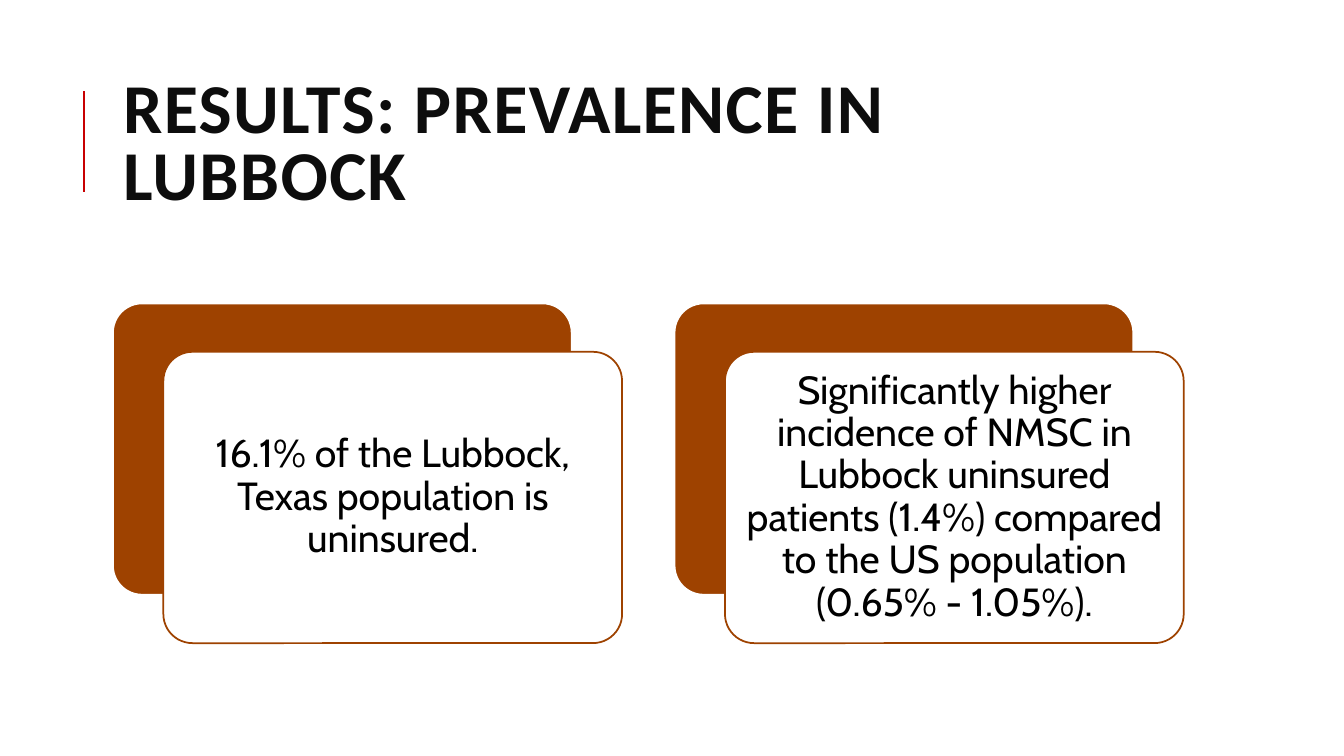
from pptx import Presentation
from pptx.dml.color import RGBColor
from pptx.enum import shapes, text
from pptx.oxml.ns import qn
from pptx.util import Inches, Pt

TITLE = "RESULTS: PREVALENCE IN LUBBOCK"
FINDINGS = [
    "16.1% of the Lubbock, Texas population is uninsured.",
    "Significantly higher incidence of NMSC in Lubbock uninsured patients "
    "(1.4%) compared to the US population (0.65% - 1.05%).",
]
RUST, WHITE, RED, BLACK, INK = "9E4200", "FFFFFF", "C80001", "000000", "0D0D0D"

# Card grid, in inches
LEFT, TOP = 1.12, 3.01
CARD_WIDTH, CARD_HEIGHT = 4.55, 2.89
COLUMN_STEP = 5.57
OFFSET_X, OFFSET_Y = 0.5, 0.48


def color(value):
    return RGBColor.from_string(value)


def write(frame, words, font, size, ink, spacing):
    frame.text = words
    frame.word_wrap = True
    frame.auto_size = text.MSO_AUTO_SIZE.NONE
    frame.vertical_anchor = text.MSO_ANCHOR.MIDDLE
    para = frame.paragraphs[0]
    para.line_spacing = spacing
    span = para.runs[0]
    span.font.name = font
    span.font.size = Pt(size)
    span.font.color.rgb = color(ink)
    return para


def add_card(page, left, top, fill, line):
    card = page.shapes.add_shape(
        shapes.MSO_SHAPE.ROUNDED_RECTANGLE,
        Inches(left), Inches(top), Inches(CARD_WIDTH), Inches(CARD_HEIGHT))
    card.adjustments[0] = 0.1
    card.shadow.inherit = False
    card.fill.solid()
    card.fill.fore_color.rgb = color(fill)
    card.line.color.rgb = color(line)
    card.line.width = Pt(1.25)
    return card


def main():
    deck = Presentation()
    deck.slide_width, deck.slide_height = Inches(13.33), Inches(7.5)
    page = deck.slides.add_slide(deck.slide_layouts[5])

    # Title with its red rule
    title = page.shapes.title
    title.left, title.top = Inches(LEFT), Inches(0.64)
    title.width, title.height = Inches(10.63), Inches(1.64)
    para = write(title.text_frame, TITLE, "Calibri", 50, INK, 0.8)
    para.alignment = text.PP_ALIGN.LEFT
    span = para.runs[0]
    span.font.bold = True
    span.font._element.set("spc", "100")

    rule = page.shapes.add_connector(
        shapes.MSO_CONNECTOR.STRAIGHT,
        Inches(0.83), Inches(1.9), Inches(0.83), Inches(0.9))
    rule.line.color.rgb = color(RED)
    rule.line.width = Pt(1.5)
    properties = rule._element.spPr
    properties.append(properties.makeelement(qn("a:effectLst"), {}))

    # Each finding: a white card over a rust one
    for column, finding in enumerate(FINDINGS):
        left = LEFT + column * COLUMN_STEP
        add_card(page, left, TOP, RUST, WHITE)
        front = add_card(page, left + OFFSET_X, TOP + OFFSET_Y, WHITE, RUST)
        frame = front.text_frame
        frame.margin_left = frame.margin_right = Inches(0.12)
        frame.margin_top = frame.margin_bottom = Inches(0.12)
        para = write(frame, finding, "Cabin", 28, BLACK, 0.9)
        para.alignment = text.PP_ALIGN.CENTER

    deck.save("out.pptx")


if __name__ == "__main__":
    main()
